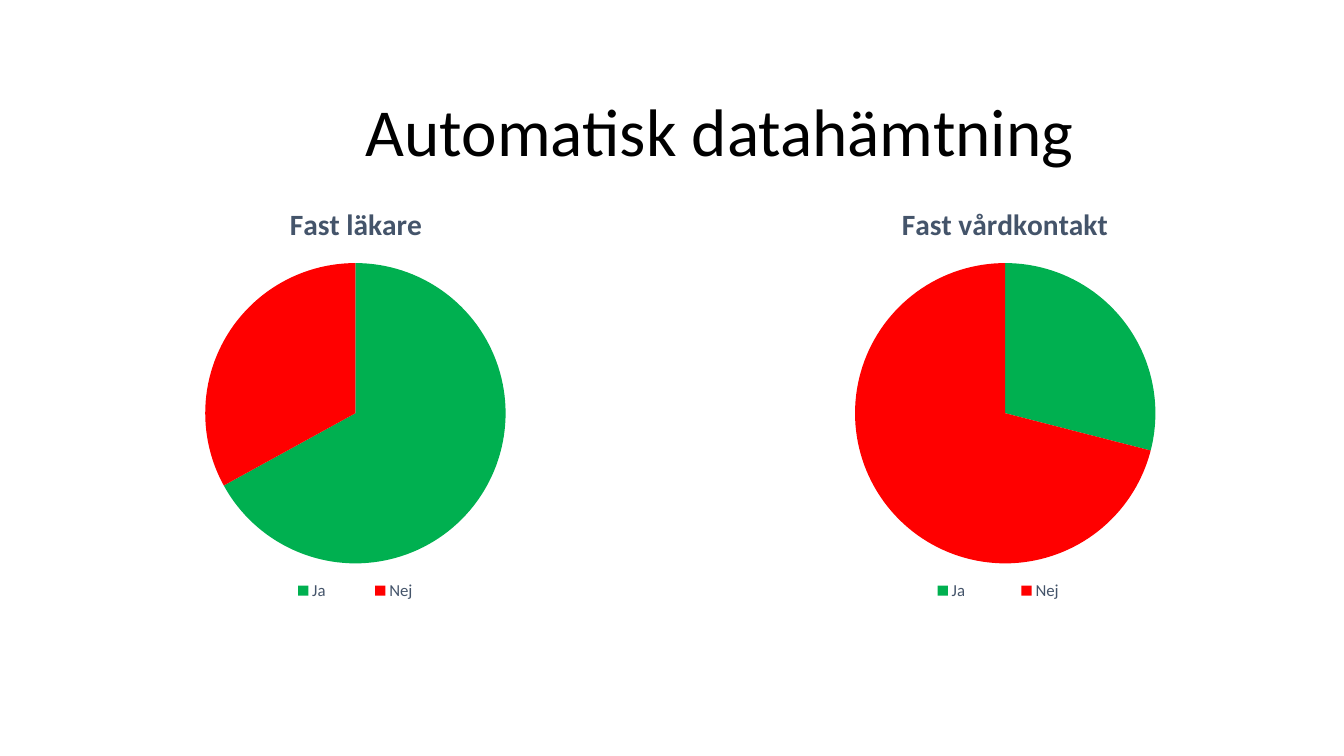
import pptx
import pptx.util
import pptx.chart.data
import pptx.dml.color
import pptx.enum.chart
import pptx.oxml
import pptx.oxml.ns
from pptx.util import Inches

HEADING = "Automatisk datahämtning"
ANSWERS = {"Ja": "00B050", "Nej": "FF0000"}
PIES = [
    {"title": "Fast vårdkontakt", "left": 6.52, "width": 6.9, "title_x": 0.344, "legend_x": 0.33, "shares": (29, 71)},
    {"title": "Fast läkare", "left": 0.39, "width": 6.27, "title_x": 0.388, "legend_x": 0.34, "shares": (67, 33)},
]
PIE_TOP, PIE_HEIGHT = 1.87, 4.2
DISC_TOP, DISC_SIZE = 0.74, 2.98
TITLE_Y = 0.023
LEGEND_Y, LEGEND_WIDTH, LEGEND_HEIGHT = 0.91, 0.32, 0.08
SLATE = "44546A"


def color(value):
    return pptx.dml.color.RGBColor.from_string(value)


def style(font, size, shade, bold=False):
    font.name = "Calibri"
    font.size = pptx.util.Pt(size)
    font.bold = bold
    font.color.rgb = color(shade)


def write(frame, text, **look):
    run = frame.paragraphs[0].add_run()
    run.text = text
    style(run.font, **look)


def place(parent, position, **places):
    for automatic in parent.findall(pptx.oxml.ns.qn("c:layout")):
        parent.remove(automatic)
    edges = {"xMode": "edge", "yMode": "edge", **places}
    tags = "".join(f'<c:{tag} val="{value}"/>' for tag, value in edges.items())
    space = pptx.oxml.ns.nsdecls("c")
    parent.insert(position, pptx.oxml.parse_xml(
        f"<c:layout {space}><c:manualLayout>{tags}</c:manualLayout></c:layout>"
    ))


def add_pie(slide, title, left, width, title_x, legend_x, shares):
    answers = pptx.chart.data.CategoryChartData()
    answers.categories = list(ANSWERS)
    answers.add_series("Series 1", shares)
    chart = slide.shapes.add_chart(
        pptx.enum.chart.XL_CHART_TYPE.PIE,
        Inches(left), Inches(PIE_TOP), Inches(width), Inches(PIE_HEIGHT), answers,
    ).chart
    style(chart.font, 10, "000000")
    chart.has_title = True
    write(chart.chart_title.text_frame, title, size=21, shade=SLATE, bold=True)
    chart.chart_title.include_in_layout = False
    place(chart.chart_title._element, 1, x=title_x, y=TITLE_Y)

    disc = DISC_SIZE / width
    place(
        chart._chartSpace.chart.plotArea, 0,
        x=round((1 - disc) / 2, 4), y=round(DISC_TOP / PIE_HEIGHT, 4),
        w=round(disc, 4), h=round(DISC_SIZE / PIE_HEIGHT, 4),
    )
    target = pptx.oxml.parse_xml(f'<c:layoutTarget {pptx.oxml.ns.nsdecls("c")} val="inner"/>')
    chart._chartSpace.chart.plotArea[0][0].insert(0, target)
    chart.plots[0].vary_by_categories = True
    points = chart.plots[0].series[0].points
    for index, shade in enumerate(ANSWERS.values()):
        points[index].format.fill.solid()
        points[index].format.fill.fore_color.rgb = color(shade)
        points[index].format.line.fill.background()

    chart.has_legend = True
    chart.legend.position = pptx.enum.chart.XL_LEGEND_POSITION.BOTTOM
    chart.legend.include_in_layout = False
    style(chart.legend.font, 12, SLATE)
    place(chart.legend._element, 1, x=legend_x, y=LEGEND_Y, w=LEGEND_WIDTH, h=LEGEND_HEIGHT)


deck = pptx.Presentation()
deck.slide_width, deck.slide_height = Inches(13.33), Inches(7.5)
slide = deck.slides.add_slide(deck.slide_layouts[6])
for pie in PIES:
    add_pie(slide, **pie)
heading = slide.shapes.add_textbox(Inches(3.53), Inches(0.84), Inches(7.87), Inches(0.91)).text_frame
heading.word_wrap = True
write(heading, HEADING, size=48, shade="000000")
deck.save("out.pptx")
